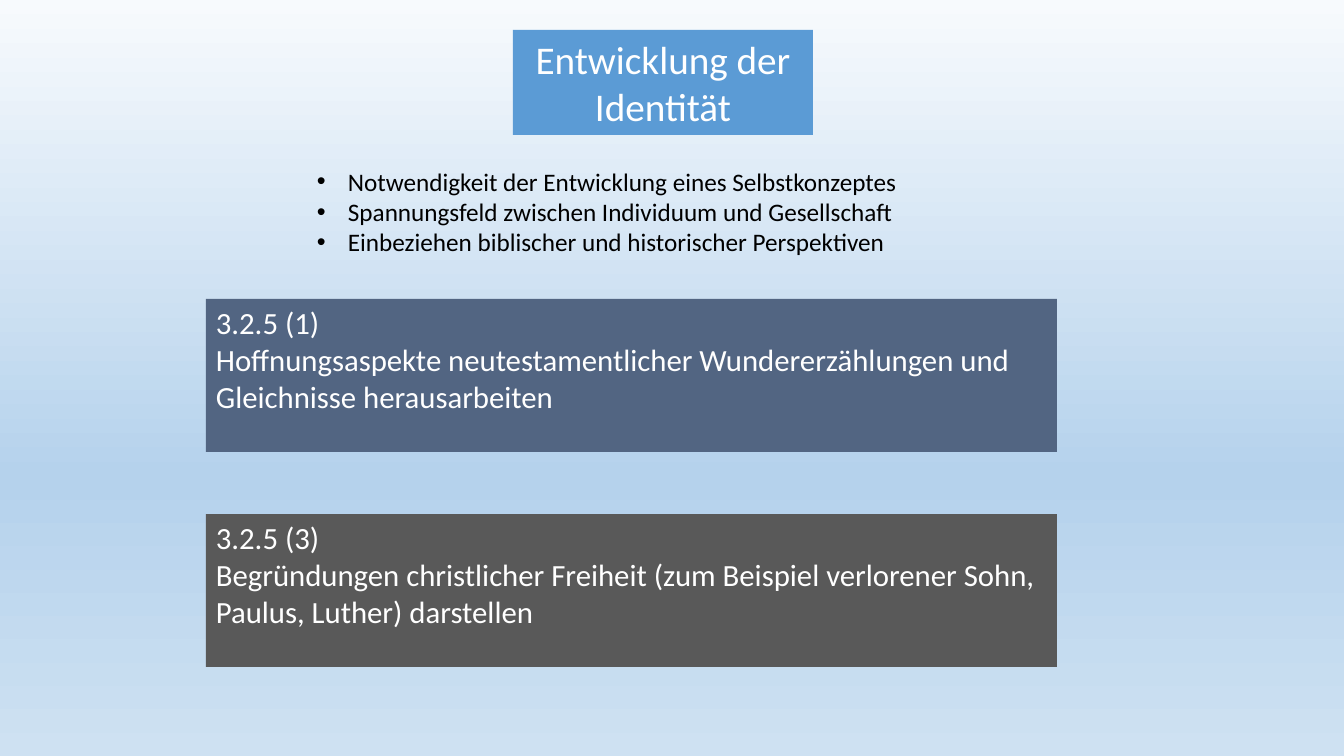
from lxml import etree
from pptx import Presentation
from pptx.dml.color import RGBColor
from pptx.enum.shapes import MSO_SHAPE
from pptx.enum.text import MSO_ANCHOR, PP_ALIGN
from pptx.oxml.ns import qn
from pptx.util import Emu, Pt

RECT = MSO_SHAPE.RECTANGLE
TOP = MSO_ANCHOR.TOP
LEFT, CENTER = PP_ALIGN.LEFT, PP_ALIGN.CENTER

# Content
TITLE = ["Entwicklung der", "Identität"]
POINTS = [
    "Notwendigkeit der Entwicklung eines Selbstkonzeptes",
    "Spannungsfeld zwischen Individuum und Gesellschaft",
    "Einbeziehen biblischer und historischer Perspektiven",
]
GOALS = [
    ("blue", ["3.2.5 (1)", "Hoffnungsaspekte neutestamentlicher "
              "Wundererzählungen und Gleichnisse herausarbeiten"]),
    ("gray", ["3.2.5 (3)", "Begründungen christlicher Freiheit (zum Beispiel "
              "verlorener Sohn, Paulus, Luther) darstellen"]),
]
COLORS = {"title": "5B9BD5", "blue": "526582", "gray": "595959",
          "white": "FFFFFF", "black": "000000"}
SKY = [(0, "F7FAFD"), (63, "B5D2EC"), (100, "CEE1F2")]
FONT = "Calibri"

# Layout in px
WIDTH, HEIGHT = 1344, 756
HEAD = (513, 30, 300, 105)
LIST = (307, 161, 712, 132)
GOAL = (206, 299, 851, 153)
STEP = 215
INDENT = 31


def px(n):
    return Emu(round(n * 914400 / 100.8))


def add_text(lines, box, size, color="white", fill=None, align=LEFT,
             bullet=False):
    area = [px(n) for n in box]
    if fill:
        shape = slide.shapes.add_shape(RECT, *area)
        shape.shadow.inherit = False
        shape.fill.solid()
        shape.fill.fore_color.rgb = RGBColor.from_string(COLORS[fill])
        shape.line.fill.background()
    else:
        shape = slide.shapes.add_textbox(*area)
    frame = shape.text_frame
    frame.word_wrap = True
    frame.vertical_anchor = TOP
    frame.text = "\n".join(lines)
    for para in frame.paragraphs:
        para.alignment = align
        font = para.runs[0].font
        font.name, font.size = FONT, Pt(size)
        font.color.rgb = RGBColor.from_string(COLORS[color])
        if bullet:
            props = para._p.get_or_add_pPr()
            props.set("marL", str(px(INDENT)))
            props.set("indent", str(-px(INDENT)))
            etree.SubElement(props, qn("a:buFont"), typeface="Arial")
            etree.SubElement(props, qn("a:buChar"), char="•")


deck = Presentation()
deck.slide_width, deck.slide_height = px(WIDTH), px(HEIGHT)
slide = deck.slides.add_slide(deck.slide_layouts[6])

# Background: three stops from top to bottom
back = slide.background.fill
back.gradient()
back.gradient_angle = 270
stops = slide.background._cSld.find(".//" + qn("a:gsLst"))
for old in list(stops):
    stops.remove(old)
for pos, tone in SKY:
    stop = etree.SubElement(stops, qn("a:gs"), pos=str(pos * 1000))
    etree.SubElement(stop, qn("a:srgbClr"), val=tone)

# Bullet list, goals and title
add_text(POINTS, LIST, 18, color="black", bullet=True)
x, y, w, h = GOAL
for i, (fill, lines) in enumerate(GOALS):
    add_text(lines, (x, y + i * STEP, w, h), 22, fill=fill)
add_text(TITLE, HEAD, 28, fill="title", align=CENTER)

deck.save("out.pptx")
